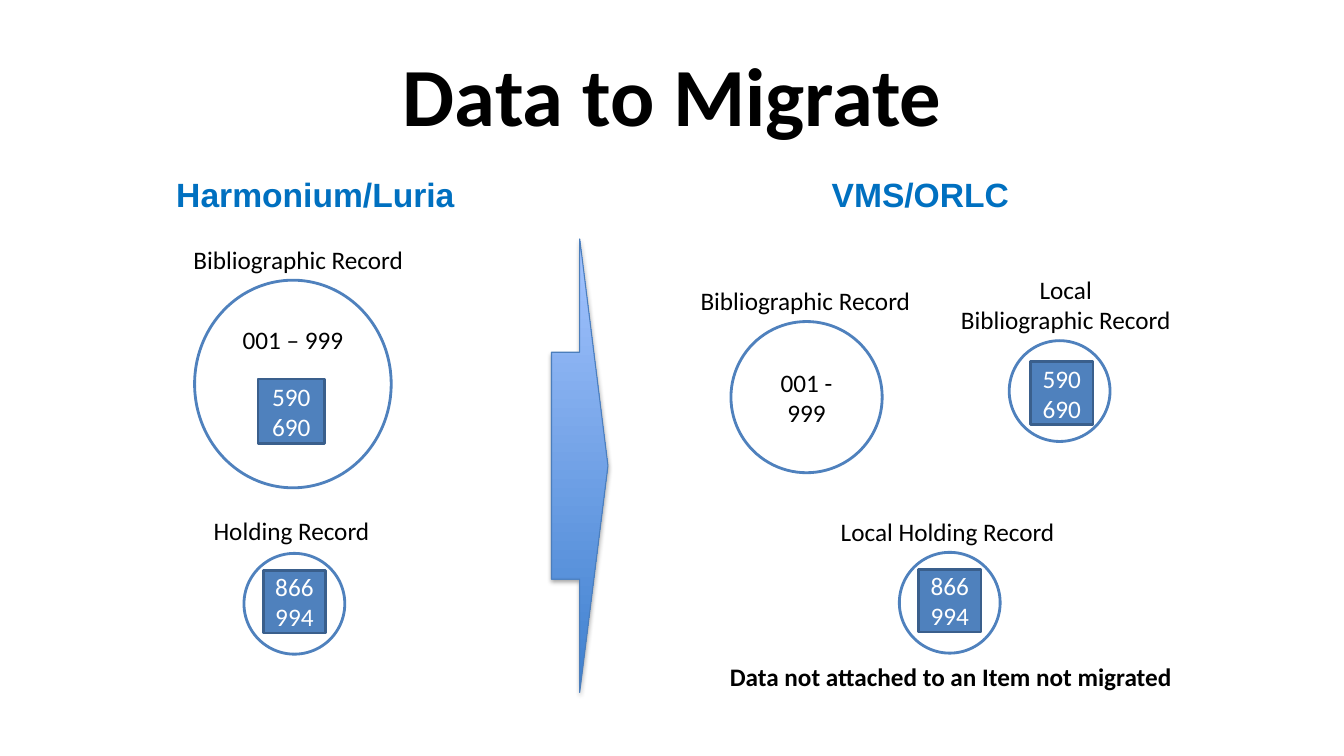
from lxml import etree
from pptx import Presentation
from pptx.dml.color import RGBColor
from pptx.enum import shapes as es, text as et
from pptx.oxml import ns
from pptx.util import Inches, Pt

BLACK = RGBColor(0, 0, 0)
WHITE = RGBColor(255, 255, 255)
BLUE = RGBColor(0x4F, 0x81, 0xBD)
EDGE = RGBColor(0x3A, 0x5F, 0x8C)
HEAD = RGBColor(0, 0x70, 0xC0)
DARK = RGBColor(0x3F, 0x80, 0xCE)
LIGHT = RGBColor(0xA4, 0xC4, 0xFF)
RIM = RGBColor(0x4B, 0x7E, 0xBC)

LEFT, CENTER = et.PP_ALIGN.LEFT, et.PP_ALIGN.CENTER
OVAL, RECT = es.MSO_SHAPE.OVAL, es.MSO_SHAPE.RECTANGLE


def child(node, tag, **attrs):
    return etree.SubElement(node, ns.qn(tag), attrs)


def write(frame, words, size=18, face="Calibri", color=BLACK, bold=False,
          align=CENTER, tab=None):
    frame.text = words
    for para in frame.paragraphs:
        para.alignment = align
        if tab:
            stops = child(para._p.get_or_add_pPr(), "a:tabLst")
            child(stops, "a:tab", pos=str(Inches(tab)), algn="l")
        font = para.font
        for run in para.runs:
            font = run.font
            font.name, font.size, font.bold = face, Pt(size), bold
            font.color.rgb = color


def label(slide, x, y, w, h, words, wrap=False, **look):
    box = slide.shapes.add_textbox(Inches(x), Inches(y), Inches(w), Inches(h))
    frame = box.text_frame
    frame.word_wrap = wrap
    frame.auto_size = et.MSO_AUTO_SIZE.SHAPE_TO_FIT_TEXT
    write(frame, words, **look)


def shape(slide, kind, x, y, w, h, edge, width=2, fill=None):
    item = slide.shapes.add_shape(kind, Inches(x), Inches(y), Inches(w), Inches(h))
    item.shadow.inherit = False
    if fill is not None:
        item.fill.solid()
        item.fill.fore_color.rgb = fill
    item.line.color.rgb = edge
    item.line.width = Pt(width)
    return item


def ring(slide, x, y, w, h, words="", top=None):
    item = shape(slide, OVAL, x, y, w, h, BLUE, fill=WHITE)
    frame = item.text_frame
    frame.vertical_anchor = et.MSO_ANCHOR.MIDDLE
    if top is not None:
        frame.vertical_anchor = et.MSO_ANCHOR.TOP
        frame.margin_top = Inches(top)
    if words:
        write(frame, words)


def tags(slide, x, y, w, h, words):
    item = shape(slide, RECT, x, y, w, h, EDGE, fill=BLUE)
    item.text_frame.vertical_anchor = et.MSO_ANCHOR.MIDDLE
    write(item.text_frame, words, color=WHITE)


def arrow(slide, x, y, w, h):
    item = shape(slide, es.MSO_SHAPE.RIGHT_ARROW, x, y, w, h, RIM, 0.75)
    item.fill.gradient()
    item.fill.gradient_angle = 90
    for stop, place, color in zip(item.fill.gradient_stops, (0, 1), (DARK, LIGHT)):
        stop.position = place
        stop.color.rgb = color
    effects = item._element.spPr.find(ns.qn("a:effectLst"))
    shade = child(effects, "a:outerShdw", blurRad=str(Pt(3.1)), dist=str(Pt(1.8)),
                  dir="5400000", rotWithShape="0")
    child(child(shade, "a:srgbClr", val="000000"), "a:alpha", val="35000")


def main():
    deck = Presentation()
    deck.slide_width, deck.slide_height = Inches(13.33), Inches(7.5)
    slide = deck.slides.add_slide(deck.slide_layouts[5])

    title = slide.shapes.title
    title.left, title.top = Inches(2.17), Inches(0.3)
    title.width, title.height = Inches(9), Inches(1.25)
    title.text_frame.vertical_anchor = et.MSO_ANCHOR.MIDDLE
    title.text_frame.auto_size = et.MSO_AUTO_SIZE.NONE
    write(title.text_frame, "Data to Migrate", size=59, bold=True)

    ring(slide, 1.93, 2.78, 1.95, 2.06, "001 – 999", top=0.14)
    ring(slide, 7.25, 3.19, 1.5, 1.5, "001 - 999")
    for x, y in ((10.01, 3.38), (8.92, 5.48), (2.42, 5.49)):
        ring(slide, x, y, 1, 1)

    for x, y, w, words in (
        (1.82, 2.37, 2.3, "Bibliographic Record"),
        (2.02, 5.06, 1.77, "Holding Record"),
        (6.85, 2.78, 2.3, "Bibliographic Record"),
        (8.24, 5.07, 2.35, "Local Holding Record"),
    ):
        label(slide, x, y, w, 0.4, words, align=LEFT)
    label(slide, 9.42, 2.67, 2.3, 0.71, "Local\nBibliographic Record")
    label(slide, 7.14, 6.51, 4.69, 0.4, "Data not attached to an Item not migrated",
          bold=True, align=LEFT)

    tags(slide, 2.56, 3.76, 0.66, 0.64, "590\n690")
    for x, y, words in ((10.22, 3.59, "590\n690"), (9.11, 5.65, "866\n994"),
                        (2.61, 5.66, "866\n994")):
        tags(slide, x, y, 0.62, 0.62, words)

    arrow(slide, 5.47, 2.37, 0.56, 4.5)
    label(slide, 1.65, 1.68, 8.86, 0.5, "Harmonium/Luria\tVMS/ORLC", wrap=True,
          size=24, face="Arial", color=HEAD, bold=True, align=LEFT, tab=6.5)
    deck.save("out.pptx")


if __name__ == "__main__":
    main()
